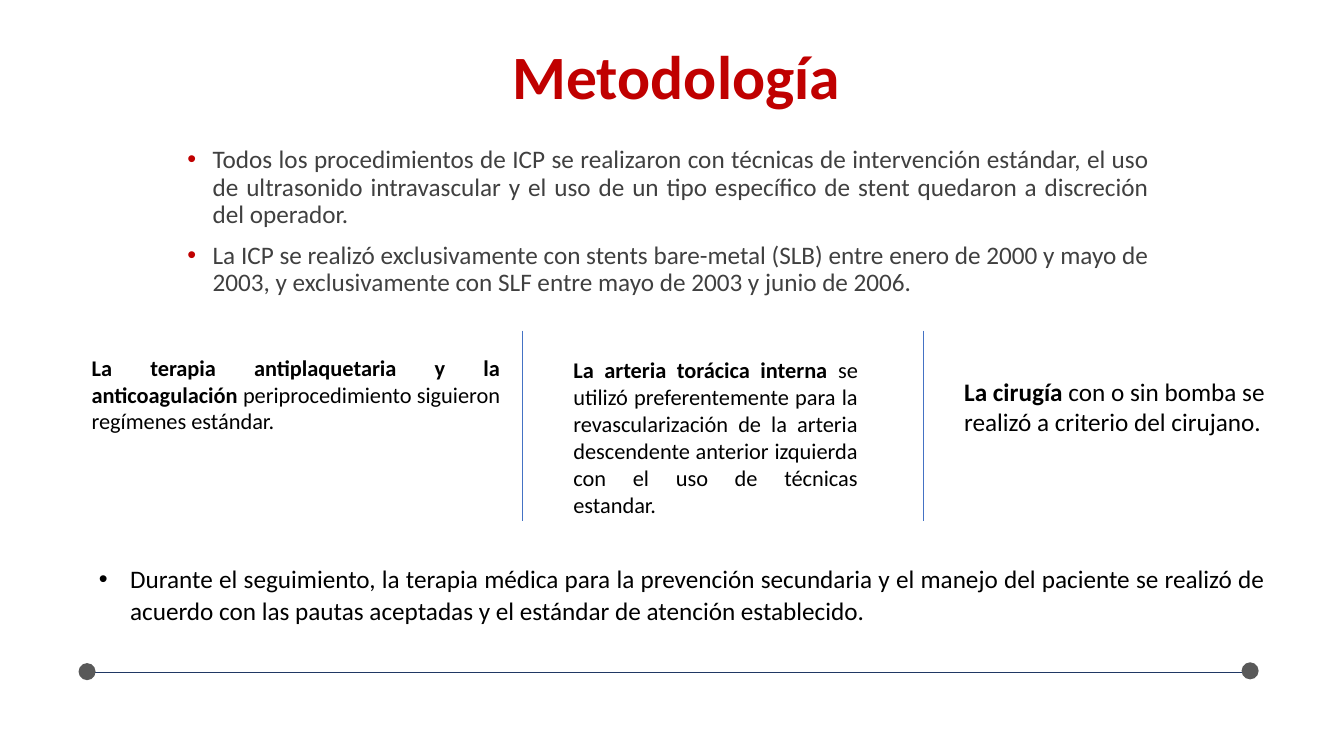
from lxml import etree
from pptx import Presentation
from pptx.dml.color import RGBColor
from pptx.enum.shapes import MSO_CONNECTOR, MSO_SHAPE
from pptx.enum.text import MSO_ANCHOR, MSO_AUTO_SIZE, PP_ALIGN
from pptx.oxml.ns import qn
from pptx.util import Cm, Pt

STRAIGHT = MSO_CONNECTOR.STRAIGHT
OVAL = MSO_SHAPE.OVAL
TOP, MIDDLE = MSO_ANCHOR.TOP, MSO_ANCHOR.MIDDLE
GROW, FIXED = MSO_AUTO_SIZE.SHAPE_TO_FIT_TEXT, MSO_AUTO_SIZE.NONE
LEFT, CENTER, JUSTIFY = PP_ALIGN.LEFT, PP_ALIGN.CENTER, PP_ALIGN.JUSTIFY

RED, BLACK, DARK, GREY = "C00000", "000000", "404040", "595959"
NAVY, BLUE = "203864", "4472C4"


def color(value):
    """Turn a hex string into a colour."""
    return RGBColor.from_string(value)


def apply(target, values):
    """Set every attribute named in a dict of format values."""
    for name, value in values.items():
        setattr(target, name, value)


class SlideBuilder:
    """Hold the text style and the current page."""

    def __init__(self, page, font_name):
        """Keep the page and the font used on it."""
        self.page = page
        self.font_name = font_name

    def line(self, start, end, line_color):
        """Draw a thin straight line."""
        line = self.page.shapes.add_connector(STRAIGHT, *map(Cm, start + end))
        line.line.color.rgb = color(line_color)
        line.line.width = Pt(0.5)
        etree.SubElement(line.element.spPr, qn("a:effectLst"))

    def dot(self, left, top, size, fill):
        """Draw a filled circle without outline."""
        dot = self.page.shapes.add_shape(OVAL, *map(Cm, (left, top, size, size)))
        dot.shadow.inherit = False
        dot.fill.solid()
        dot.fill.fore_color.rgb = color(fill)
        dot.line.fill.background()

    def text_box(self, place, anchor=TOP, auto_size=GROW):
        """Add an empty wrapping text box and return its frame."""
        frame = self.page.shapes.add_textbox(*map(Cm, place)).text_frame
        apply(frame, {"word_wrap": True, "auto_size": auto_size, "vertical_anchor": anchor})
        return frame

    def bullet(self, paragraph, indent, bullet_color):
        """Give a paragraph a hanging bullet."""
        properties = paragraph._p.get_or_add_pPr()
        properties.set("marL", str(Cm(indent)))
        properties.set("indent", str(-Cm(indent)))
        paint = etree.SubElement(properties, qn("a:buClr"))
        etree.SubElement(paint, qn("a:srgbClr")).set("val", bullet_color)
        etree.SubElement(properties, qn("a:buFont")).set("typeface", "Arial")
        etree.SubElement(properties, qn("a:buChar")).set("char", "•")

    def add_spans(self, paragraph, spans, text_color, layout):
        """Put spans of text, size and weight in one paragraph."""
        apply(paragraph, layout)
        for text, size, bold in spans:
            span = paragraph.add_run()
            span.text = text
            apply(span.font, {"name": self.font_name, "size": Pt(size), "bold": bold})
            span.font.color.rgb = color(text_color)

    def title(self, place, text):
        """Add the centred page title."""
        frame = self.text_box(place, MIDDLE, FIXED)
        self.add_spans(frame.paragraphs[0], [(text, 44, True), (" ", 32, True)], RED,
                       {"alignment": CENTER, "line_spacing": 0.9})

    def bullets(self, place, items, indent, bullet_color, text_color, layout, gap=0):
        """Add a justified bullet list."""
        frame = self.text_box(place)
        for index, text in enumerate(items):
            paragraph = frame.add_paragraph() if index else frame.paragraphs[0]
            self.bullet(paragraph, indent, bullet_color)
            space = {"space_before": Pt(gap if index else 0)}
            self.add_spans(paragraph, [(text, 18, False)], text_color,
                           {"alignment": JUSTIFY} | layout | space)

    def note(self, place, lead, text, size, alignment):
        """Add a note that opens with bold words."""
        frame = self.text_box(place)
        self.add_spans(frame.paragraphs[0], [(lead + " ", size, True), (text, size, False)],
                       BLACK, {"alignment": alignment})


PROCEDURES = [
    "Todos los procedimientos de ICP se realizaron con técnicas de intervención estándar, "
    "el uso de ultrasonido intravascular y el uso de un tipo específico de stent quedaron "
    "a discreción del operador.",
    "La ICP se realizó exclusivamente con stents bare-metal (SLB) entre enero de 2000 y "
    "mayo de 2003, y exclusivamente con SLF entre mayo de 2003 y junio de 2006.",
]
NOTES = [
    ((2.06, 8.79, 10.8, 2.31), "La terapia antiplaquetaria y la anticoagulación",
     "periprocedimiento siguieron regímenes estándar.", 16, JUSTIFY),
    ((14.2, 8.86, 7.67, 4.37), "La arteria torácica interna",
     "se utilizó preferentemente para la revascularización de la arteria descendente "
     "anterior izquierda con el uso de técnicas estandar.", 16, JUSTIFY),
    ((24.05, 9.35, 8.1, 2.57), "La cirugía",
     "con o sin bomba se realizó a criterio del cirujano.", 18, LEFT),
]
FOLLOW_UP = [
    "Durante el seguimiento, la terapia médica para la prevención secundaria y el manejo "
    "del paciente se realizó de acuerdo con las pautas aceptadas y el estándar de atención "
    "establecido.",
]


def main():
    """Build the methodology slide and save it."""
    deck = Presentation()
    apply(deck, {"slide_width": Cm(33.87), "slide_height": Cm(19.05)})
    builder = SlideBuilder(deck.slides.add_slide(deck.slide_layouts[6]), "Calibri")

    builder.line((2.29, 16.94), (31.45, 16.94), NAVY)
    for left, top in ((31.29, 16.69), (1.98, 16.71)):
        builder.dot(left, top, 0.43, GREY)

    builder.title((2.57, 0.66, 29.21, 2.69), "Metodología")
    builder.bullets((4.47, 3.58, 24.74, 4.2), PROCEDURES, 0.64, RED, DARK,
                    {"line_spacing": 0.9}, gap=10)
    for note in NOTES:
        builder.note(*note)
    for x in (13.16, 23.27):
        builder.line((x, 8.33), (x, 13.13), BLUE)
    builder.bullets((2.24, 14.02, 29.9, 1.85), FOLLOW_UP, 0.79, BLACK, BLACK,
                    {"line_spacing": 1.07, "space_after": Pt(8)})
    deck.save("out.pptx")


if __name__ == "__main__":
    main()
